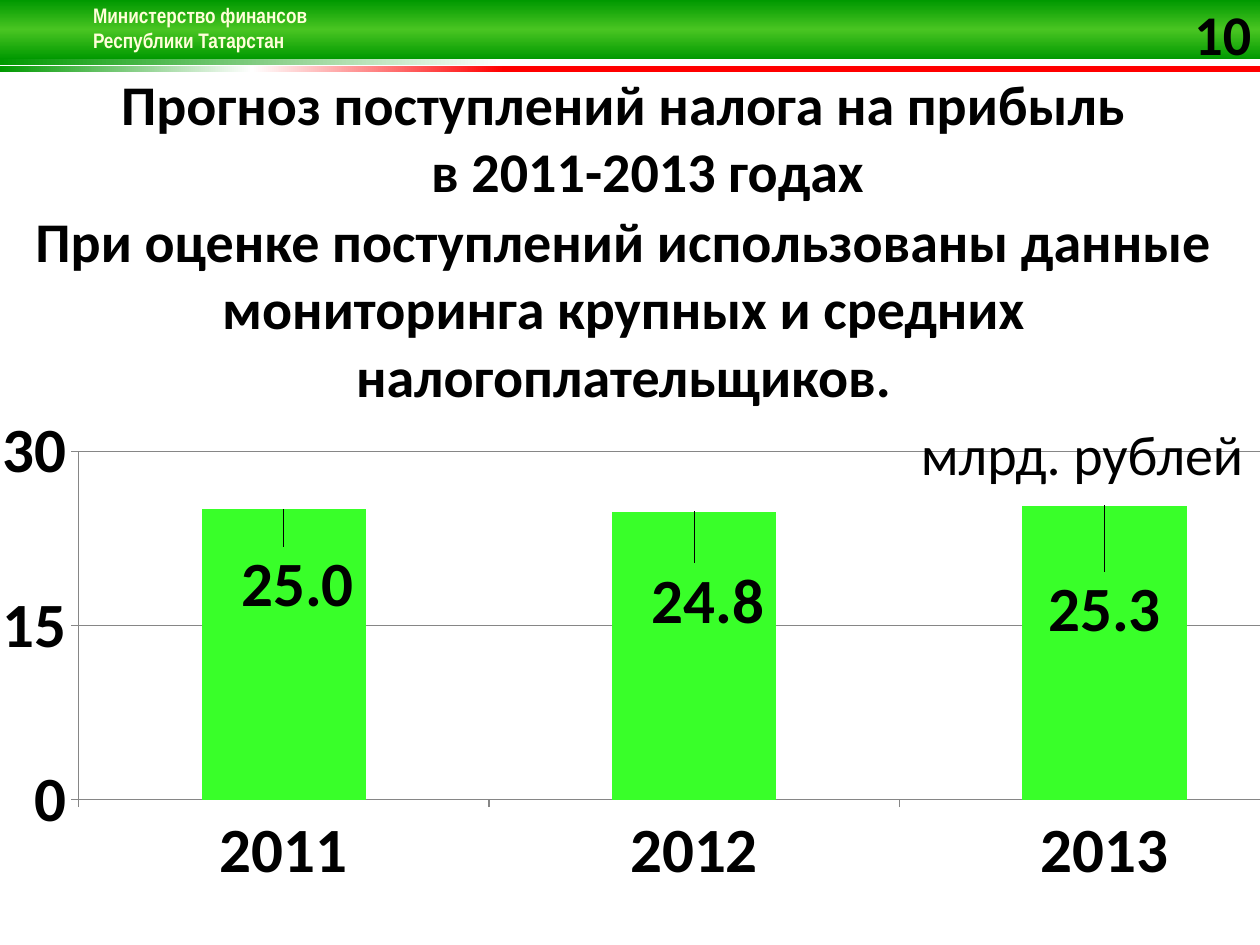
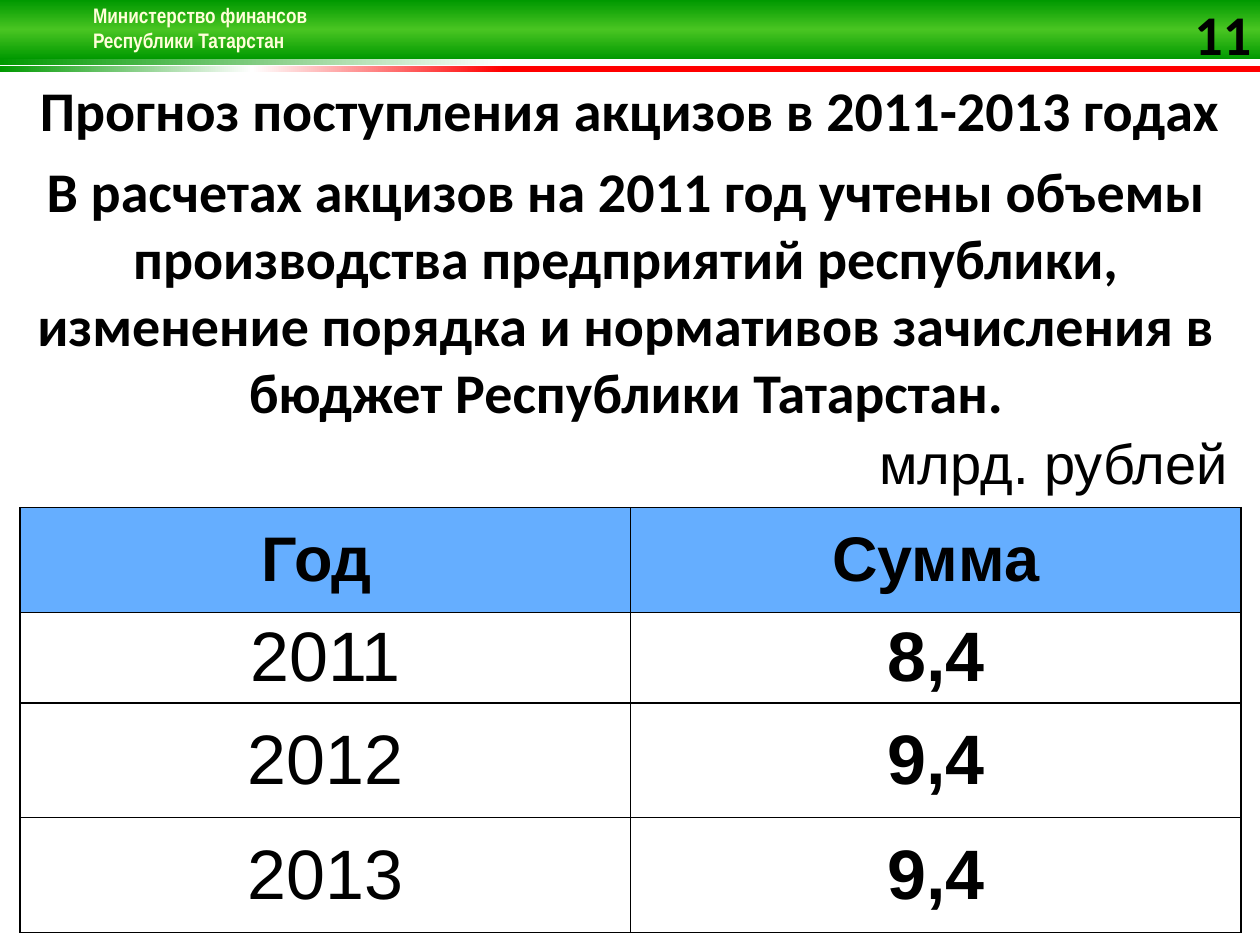
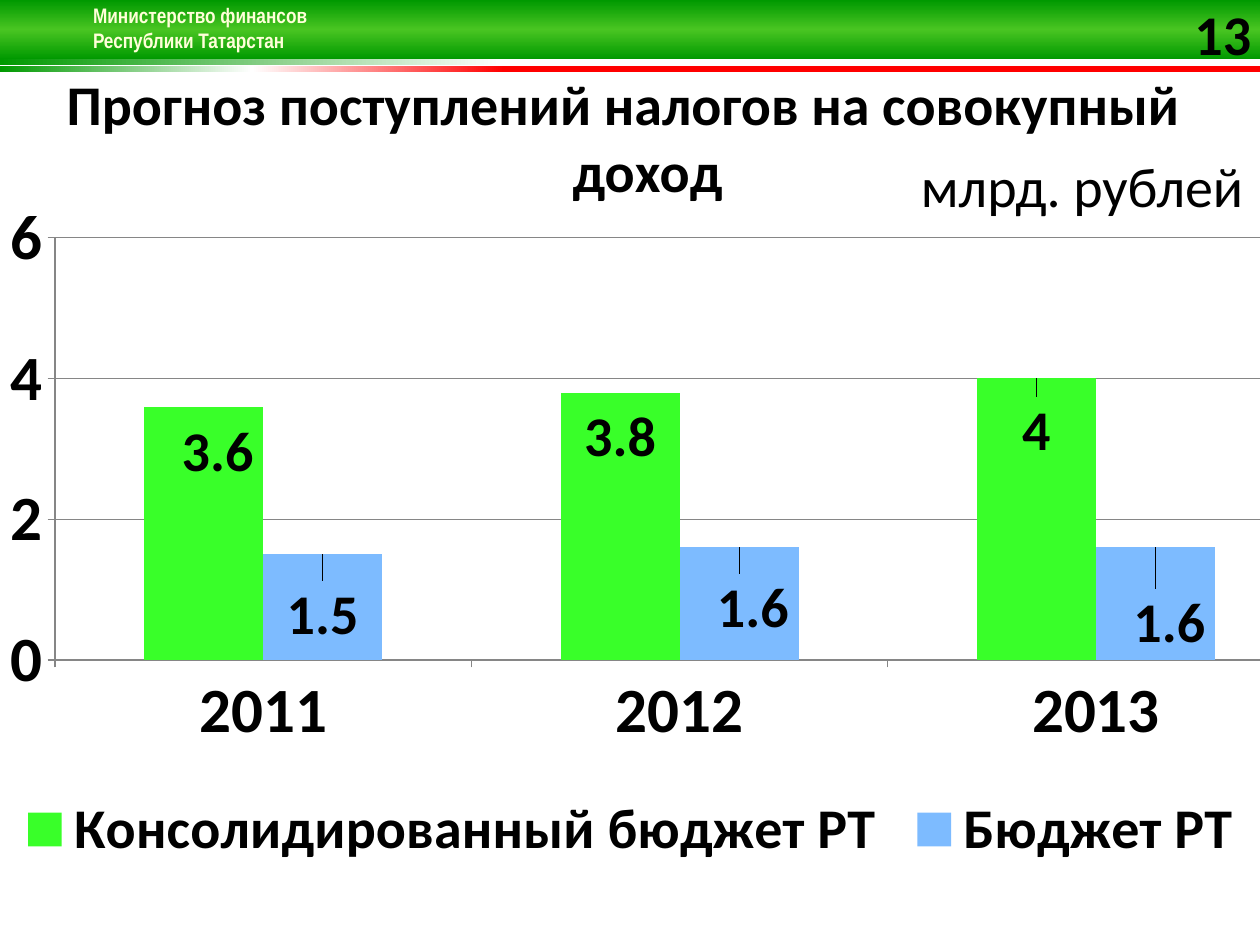
from lxml.etree import SubElement
from pptx import Presentation
from pptx.chart.data import CategoryChartData
from pptx.dml.color import RGBColor
from pptx.enum.chart import XL_CHART_TYPE, XL_LABEL_POSITION, XL_LEGEND_POSITION, XL_TICK_MARK
from pptx.enum.shapes import MSO_SHAPE
from pptx.enum.text import MSO_ANCHOR, MSO_AUTO_SIZE, PP_ALIGN
from pptx.oxml import parse_xml
from pptx.oxml.ns import nsdecls, qn
from pptx.util import Inches, Pt

COLORS = {
    "black": "000000", "white": "FFFFFF", "cream": "FFFFD9", "red": "FF0000",
    "green": "009900", "light green": "49C522", "bar green": "39FF29",
    "bar blue": "7DBBFF", "header blue": "65AEFF", "grid": "868686",
}
BANDS = [  # top, height, angle, gradient stops
    (0.47, 0.05, 0, [(0, "green"), (40, "white"), (100, "white")]),
    (0.52, 0.05, 0, [(0, "green"), (20, "white"), (40, "red"), (100, "red")]),
    (0, 0.47, 90, [(0, "green"), (50, "light green"), (100, "green")]),
]
YEARS = ["2011", "2012", "2013"]
UNIT = "млрд. рублей"
FLUSH = (0, 0, 0.1, 0.05)
STANDARD = (0.1, 0.05, 0.1, 0.05)


def color(name):
    return RGBColor.from_string(COLORS[name])


def set_font(font, size, bold=True, name="Calibri", fill="black"):
    font.size, font.bold, font.name = Pt(size), bold, name
    font.color.rgb = color(fill)


def write(frame, text, size=32, align=PP_ALIGN.LEFT, **style):
    frame.text = text
    para = frame.paragraphs[0]
    para.alignment = align
    for span in para.runs:
        set_font(span.font, size, **style)
    return para


def set_frame(frame, insets=STANDARD, wrap=True):
    frame.word_wrap = wrap
    frame.auto_size = MSO_AUTO_SIZE.NONE
    frame.vertical_anchor = MSO_ANCHOR.TOP
    (frame.margin_left, frame.margin_top,
     frame.margin_right, frame.margin_bottom) = map(Inches, insets)


def add_text_shadow(span):
    effects = parse_xml(
        f'<a:effectLst {nsdecls("a")}><a:outerShdw blurRad="38100" dist="38100" dir="2700000">'
        f'<a:srgbClr val="{COLORS["black"]}"/></a:outerShdw></a:effectLst>')
    span.font._element.find(qn("a:solidFill")).addnext(effects)


def manual_layout(inner=False, **place):
    """Chart layout from fractions x, y, w, h; without w it is an offset."""
    parts = '<c:layoutTarget val="inner"/>' if inner else ""
    if "w" in place:
        parts += '<c:xMode val="edge"/><c:yMode val="edge"/>'
    parts += "".join(f'<c:{key} val="{value}"/>' for key, value in place.items())
    return parse_xml(f'<c:layout {nsdecls("c")}><c:manualLayout>{parts}'
                     '</c:manualLayout></c:layout>')


def set_borders(cell, sides):
    properties = cell._tc.get_or_add_tcPr()
    for index, side in enumerate(sides):
        properties.insert(index, parse_xml(
            f'<a:ln{side} {nsdecls("a")} w="12700"><a:solidFill>'
            f'<a:srgbClr val="{COLORS["black"]}"/></a:solidFill></a:ln{side}>'))


class MinistryDeck:
    def __init__(self):
        self.deck = Presentation()
        self.deck.slide_width, self.deck.slide_height = Inches(10), Inches(7.5)
        self.page = None

    def start_page(self, number, title, height, insets=FLUSH):
        self.page = self.deck.slides.add_slide(self.deck.slide_layouts[5])
        for band in BANDS:
            self.band(*band)
        header = self.text("Министерство финансов\vРеспублики Татарстан",
                           0.64, -0.03, 1.92, 0.71, size=12,
                           name="Arial Narrow", fill="cream", bold=True)
        for span in header.runs:
            add_text_shadow(span)
        self.title(title, height, insets)
        self.text(number, 9.41, 0, 0.59, 0.54, insets=(0, 0, 0, 0),
                  align=PP_ALIGN.CENTER)

    def band(self, top, height, angle, stops):
        band = self.page.shapes.add_shape(
            MSO_SHAPE.RECTANGLE, 0, Inches(top), Inches(10), Inches(height))
        band.shadow.inherit = False
        band.line.fill.background()
        band.fill.gradient()
        band.fill.gradient_angle = angle
        stop_list = band._element.spPr.find(".//" + qn("a:gsLst"))
        stop_list.clear()
        for position, name in stops:
            stop = SubElement(stop_list, qn("a:gs"), pos=str(position * 1000))
            SubElement(stop, qn("a:srgbClr"), val=COLORS[name])

    def title(self, text, height, insets):
        title = self.page.shapes.title
        title.left, title.top = Inches(0), Inches(0.55)
        title.width, title.height = Inches(10), Inches(height)
        set_frame(title.text_frame, insets)
        para = write(title.text_frame, text, align=PP_ALIGN.CENTER)
        hanging = para._p.get_or_add_pPr()
        hanging.set("marL", str(Inches(0.38)))
        hanging.set("indent", str(Inches(-0.38)))

    def text(self, text, left, top, width, height, insets=STANDARD, wrap=True, **style):
        box = self.page.shapes.add_textbox(*map(Inches, (left, top, width, height)))
        set_frame(box.text_frame, insets, wrap)
        return write(box.text_frame, text, **style)

    def unit_label(self, top):
        self.text(UNIT, 7.21, top, 2.79, 0.64, wrap=False, bold=False)

    def column_chart(self, place, plot_place, series, top_value, step, label_size,
                     number_format="General"):
        """Draw columns; series holds (name, colour, values, label offsets)."""
        data = CategoryChartData(number_format=number_format)
        data.categories = YEARS
        for name, _, values, _ in series:
            data.add_series(name, values)
        chart = self.page.shapes.add_chart(
            XL_CHART_TYPE.COLUMN_CLUSTERED, *map(Inches, place), data).chart
        set_font(chart.font, 18, bold=False)
        chart.has_title = chart.has_legend = False
        plot = chart.plots[0]
        plot.gap_width, plot.overlap, plot.vary_by_categories = 150, 0, False
        area = chart._chartSpace.find(".//" + qn("c:plotArea"))
        for layout in area.findall(qn("c:layout")):
            area.remove(layout)
        area.insert(0, manual_layout(inner=True, **plot_place))
        self.axes(chart, top_value, step)
        for columns, (_, fill, _, offsets) in zip(plot.series, series):
            columns.format.fill.solid()
            columns.format.fill.fore_color.rgb = color(fill)
            self.column_labels(columns, offsets, label_size)
        return chart

    def axes(self, chart, top_value, step):
        values = chart.value_axis
        values.minimum_scale, values.maximum_scale, values.major_unit = 0, top_value, step
        values.has_major_gridlines = True
        values.tick_labels.number_format = "0"
        values.tick_labels.number_format_is_linked = False
        for axis in (values, chart.category_axis):
            set_font(axis.tick_labels.font, 36)
            axis.major_tick_mark = XL_TICK_MARK.OUTSIDE
            axis.minor_tick_mark = XL_TICK_MARK.NONE
        for line in (values.format.line, chart.category_axis.format.line,
                     values.major_gridlines.format.line):
            line.color.rgb, line.width = color("grid"), Pt(0.75)

    def column_labels(self, columns, offsets, size):
        labels = columns.data_labels
        labels.show_value = True
        set_font(labels.font, size)
        for index, _ in enumerate(offsets):
            label = columns.points[index].data_label
            set_font(label.font, size)
            label.position = XL_LABEL_POSITION.OUTSIDE_END
        for element, (x, y) in zip(labels._element.findall(qn("c:dLbl")), offsets):
            element.find(qn("c:idx")).addnext(manual_layout(x=x, y=y))

    def legend(self, chart, **place):
        chart.has_legend = True
        chart.legend.position = XL_LEGEND_POSITION.BOTTOM
        chart.legend.include_in_layout = False
        set_font(chart.legend.font, 32)
        element = chart.legend._element
        for layout in element.findall(qn("c:layout")):
            element.remove(layout)
        element.find(qn("c:legendPos")).addnext(manual_layout(**place))

    def sums_table(self, place, heights, rows):
        """Draw the unit row, the heading row and one row for each year."""
        table = self.page.shapes.add_table(
            len(rows), 2, *map(Inches, place)).table
        table.first_row = table.horz_banding = False
        for row, height in zip(table.rows, heights):
            row.height = Inches(height)
        table.cell(0, 0).merge(table.cell(0, 1))
        for row_index, texts in enumerate(rows):
            for column, text in enumerate(texts):
                cell = table.cell(row_index, column)
                cell.vertical_anchor = MSO_ANCHOR.MIDDLE
                cell.fill.background()
                if row_index == 1:
                    cell.fill.solid()
                    cell.fill.fore_color.rgb = color("header blue")
                set_borders(cell, "LRTB" if row_index else "B")
                if text:
                    write(cell.text_frame, text, name="Arial",
                          size=(32, 36, 40)[min(row_index, 2)],
                          bold=row_index == 1 or column == 1,
                          align=PP_ALIGN.CENTER if row_index else PP_ALIGN.RIGHT)


def profit_tax(deck):
    deck.start_page("10", "Прогноз поступлений налога на прибыль\vв 2011-2013 годах", 1.23)
    deck.column_chart(
        (-0.43, 2.1, 10.98, 5.59), dict(x=0.096, y=0.265, w=0.89, h=0.495),
        [("Series 1", "bar green", (25, 24.8, 25.3),
          [(0.01, 0.17), (0.01, 0.19), (0, 0.21)])],
        top_value=30, step=15, label_size=36, number_format="0.0")
    deck.unit_label(3.28)
    deck.text("При оценке поступлений использованы данные мониторинга крупных "
              "и средних налогоплательщиков.",
              0, 1.64, 10, 1.67, insets=FLUSH, align=PP_ALIGN.CENTER)


def excise(deck):
    deck.start_page("11", "Прогноз поступления акцизов в 2011-2013 годах", 0.76, STANDARD)
    deck.sums_table(
        (0.16, 3.36, 9.69, 4.07), (0.67, 0.83, 0.55, 0.91, 0.91),
        [(UNIT, ""), ("Год ", "Сумма"), *zip(YEARS, ("8,4", "9,4", "9,4"))])
    deck.text("В расчетах акцизов на 2011 год учтены объемы производства предприятий "
              "республики, изменение порядка и нормативов зачисления в бюджет "
              "Республики Татарстан.",
              0, 1.2, 10, 2.24, insets=(0.04, 0.04, 0.1, 0.05), align=PP_ALIGN.CENTER)


def total_income_tax(deck):
    deck.start_page("13", "Прогноз поступлений налогов на совокупный доход", 0.68)
    chart = deck.column_chart(
        (-0.51, 1.15, 11.14, 6.14), dict(x=0.085, y=0.12, w=0.89, h=0.546),
        [("Консолидированный бюджет РТ", "bar green", (3.6, 3.8, 4),
          [(0.01, 0.11), (0, 0.11), (0, 0.12)]),
         ("Бюджет РТ", "bar blue", (1.5, 1.6, 1.6),
          [(0, 0.13), (0.01, 0.13), (0.01, 0.15)])],
        top_value=6, step=2, label_size=32)
    deck.legend(chart, x=0.05, y=0.83, w=0.89, h=0.11)
    deck.unit_label(1.15)


def main():
    deck = MinistryDeck()
    for build in (profit_tax, excise, total_income_tax):
        build(deck)
    deck.deck.save("out.pptx")


if __name__ == "__main__":
    main()
